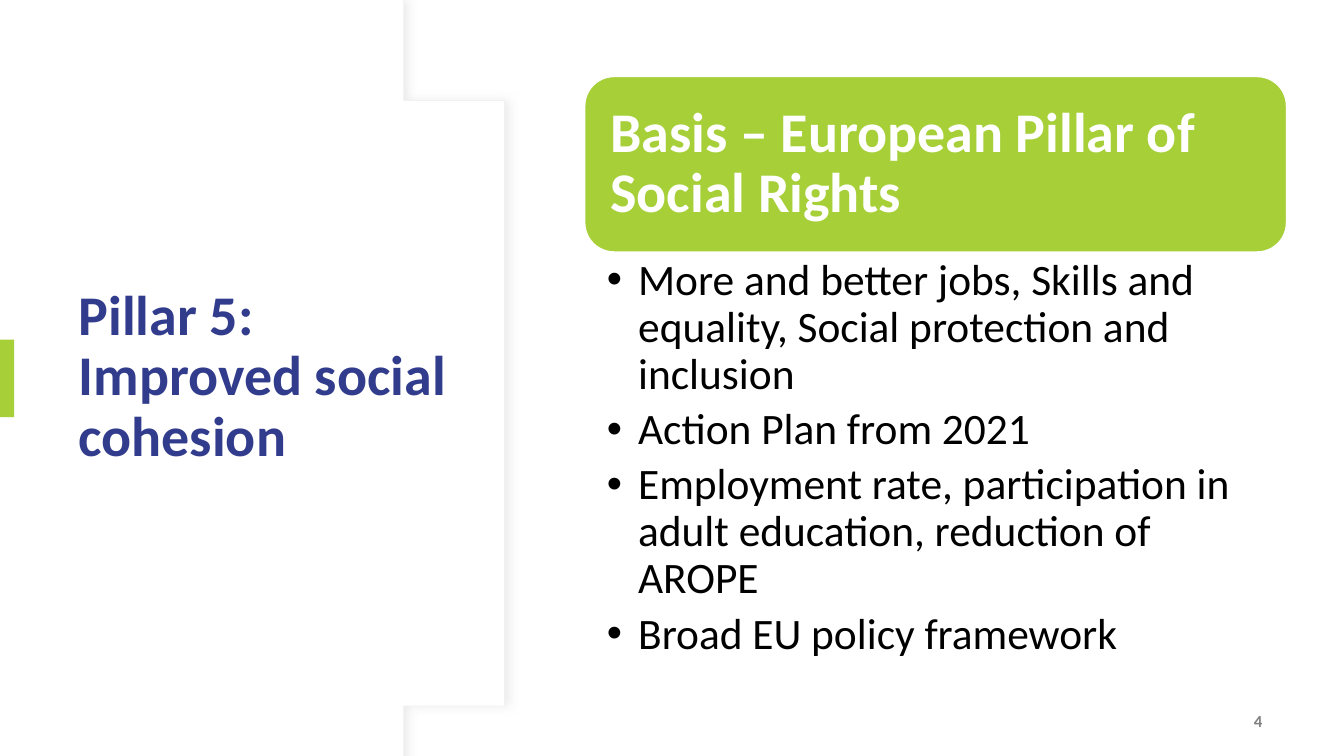
import pptx
import pptx.util
import pptx.dml.color
import pptx.enum.shapes
import pptx.enum.text
import pptx.oxml

TITLE = "Pillar 5: Improved social cohesion"
HEADING = "Basis – European Pillar of Social Rights"
POINTS = [
    "More and better jobs, Skills and equality, Social protection and inclusion",
    "Action Plan from 2021",
    "Employment rate, participation in adult education, reduction of AROPE",
    "Broad EU policy framework",
]
PAGE_NUMBER = "4"

FONT = "Calibri"
GREEN = pptx.dml.color.RGBColor(0xA6, 0xCF, 0x38)
NAVY = pptx.dml.color.RGBColor(0x32, 0x3C, 0x8C)
WHITE = pptx.dml.color.RGBColor(0xFF, 0xFF, 0xFF)
BLACK = pptx.dml.color.RGBColor(0, 0, 0)
GREY = pptx.dml.color.RGBColor(0x80, 0x80, 0x80)
PALE = pptx.dml.color.RGBColor(0xEF, 0xEF, 0xEF)

WIDTH, HEIGHT = 13.33, 7.5
CARD_LEFT, CARD_TOP, CARD_WIDTH, CARD_HEIGHT = 5.8, 0.76, 6.96, 1.74
LIST_TOP = CARD_TOP + CARD_HEIGHT
NAMESPACE = 'xmlns:a="http://schemas.openxmlformats.org/drawingml/2006/main"'
SOFT_SHADOW = (
    f'<a:effectLst {NAMESPACE}><a:outerShdw blurRad="88900" dist="38100" dir="0" '
    'algn="l" rotWithShape="0"><a:srgbClr val="D9D9D9"><a:alpha val="50000"/>'
    '</a:srgbClr></a:outerShdw></a:effectLst>'
)
CURVE_STEPS = 24

inches = pptx.util.Inches
points = pptx.util.Pt
shape_kind = pptx.enum.shapes.MSO_SHAPE
anchor = pptx.enum.text.MSO_ANCHOR


def bezier(start, first, second, end):
    for step in range(1, CURVE_STEPS + 1):
        t = step / CURVE_STEPS
        yield tuple(
            (1 - t) ** 3 * a + 3 * t * (1 - t) ** 2 * b + 3 * t * t * (1 - t) * c + t ** 3 * d
            for a, b, c, d in zip(start, first, second, end)
        )


def add_curved_panel(page, reach):
    middle = HEIGHT / 2
    shoulder = (reach - 1.26, 0.08)
    upper = [(3.94, 0), shoulder]
    upper += bezier(shoulder, (reach - 0.48, 1.02), (reach, 2.32), (reach, middle))
    lower = [(x, HEIGHT - y) for x, y in reversed(upper[:-1])]
    builder = page.shapes.build_freeform(0, 0, scale=inches(1))
    builder.add_line_segments(upper + lower + [(0, HEIGHT)], close=True)
    panel = builder.convert_to_shape()
    panel.fill.solid()
    panel.fill.fore_color.rgb = WHITE
    panel.line.fill.background()
    return panel


def add_green_shape(page, kind, left, top, width, height):
    shape = page.shapes.add_shape(kind, *map(inches, (left, top, width, height)))
    shape.shadow.inherit = False
    shape.fill.solid()
    shape.fill.fore_color.rgb = GREEN
    shape.line.fill.background()
    return shape


def set_frame(shape, vertical, margins):
    frame = shape.text_frame
    frame.word_wrap = True
    frame.auto_size = pptx.enum.text.MSO_AUTO_SIZE.NONE
    frame.vertical_anchor = vertical
    frame.margin_left, frame.margin_top, frame.margin_right, frame.margin_bottom = map(inches, margins)
    return frame


def style(para, size, color, bold, align=pptx.enum.text.PP_ALIGN.LEFT, spacing=0.9):
    para.alignment = align
    para.line_spacing = spacing
    for span in para.runs:
        span.font.name = FONT
        span.font.size = points(size)
        span.font.bold = bold
        span.font.color.rgb = color


def add_bullet(para):
    properties = para._p.get_or_add_pPr()
    properties.set("marL", str(inches(0.31)))
    properties.set("indent", str(-inches(0.31)))
    properties.append(pptx.oxml.parse_xml(f'<a:buFont {NAMESPACE} typeface="Arial"/>'))
    properties.append(pptx.oxml.parse_xml(f'<a:buChar {NAMESPACE} char="•"/>'))


def main():
    deck = pptx.Presentation()
    deck.slide_width, deck.slide_height = inches(WIDTH), inches(HEIGHT)
    page = deck.slides.add_slide(deck.slide_layouts[5])

    title = page.shapes.title
    edge = add_curved_panel(page, 5.27)
    edge.line.color.rgb = PALE
    edge.line.width = points(0.75)
    edge.element.spPr.append(pptx.oxml.parse_xml(SOFT_SHADOW))
    cover = add_curved_panel(page, 5.26)
    cover.shadow.inherit = False
    for panel in (edge, cover):
        title.element.addprevious(panel.element)

    title.left, title.top, title.width, title.height = map(inches, (0.68, 1.27, 3.94, 4.95))
    frame = set_frame(title, anchor.MIDDLE, (0.1, 0.05, 0.1, 0.05))
    frame.text = TITLE
    style(frame.paragraphs[0], 40, NAVY, True)

    add_green_shape(page, shape_kind.RECTANGLE, 0, 3.37, 0.14, 0.77)

    number = page.shapes.add_textbox(*map(inches, (9.62, 6.95, 3, 0.4)))
    frame = set_frame(number, anchor.MIDDLE, (0.1, 0.05, 0.1, 0.05))
    frame.text = PAGE_NUMBER
    style(frame.paragraphs[0], 12, GREY, True, pptx.enum.text.PP_ALIGN.RIGHT, 1.0)
    frame.paragraphs[0].space_after = points(6)

    card = add_green_shape(page, shape_kind.ROUNDED_RECTANGLE, CARD_LEFT, CARD_TOP, CARD_WIDTH, CARD_HEIGHT)
    card.line.color.rgb = WHITE
    card.line.width = points(1)
    frame = set_frame(card, anchor.MIDDLE, (0.17, 0.17, 0.17, 0.17))
    frame.text = HEADING
    style(frame.paragraphs[0], 40, WHITE, True)

    listing = page.shapes.add_textbox(*map(inches, (CARD_LEFT, LIST_TOP, CARD_WIDTH, 4.26)))
    frame = set_frame(listing, anchor.TOP, (0.22, 0.06, 0.31, 0.06))
    frame.text = "\n".join(POINTS)
    for para in frame.paragraphs:
        add_bullet(para)
        style(para, 31, BLACK, False)
        para.space_after = points(6)

    deck.save("out.pptx")


if __name__ == "__main__":
    main()
